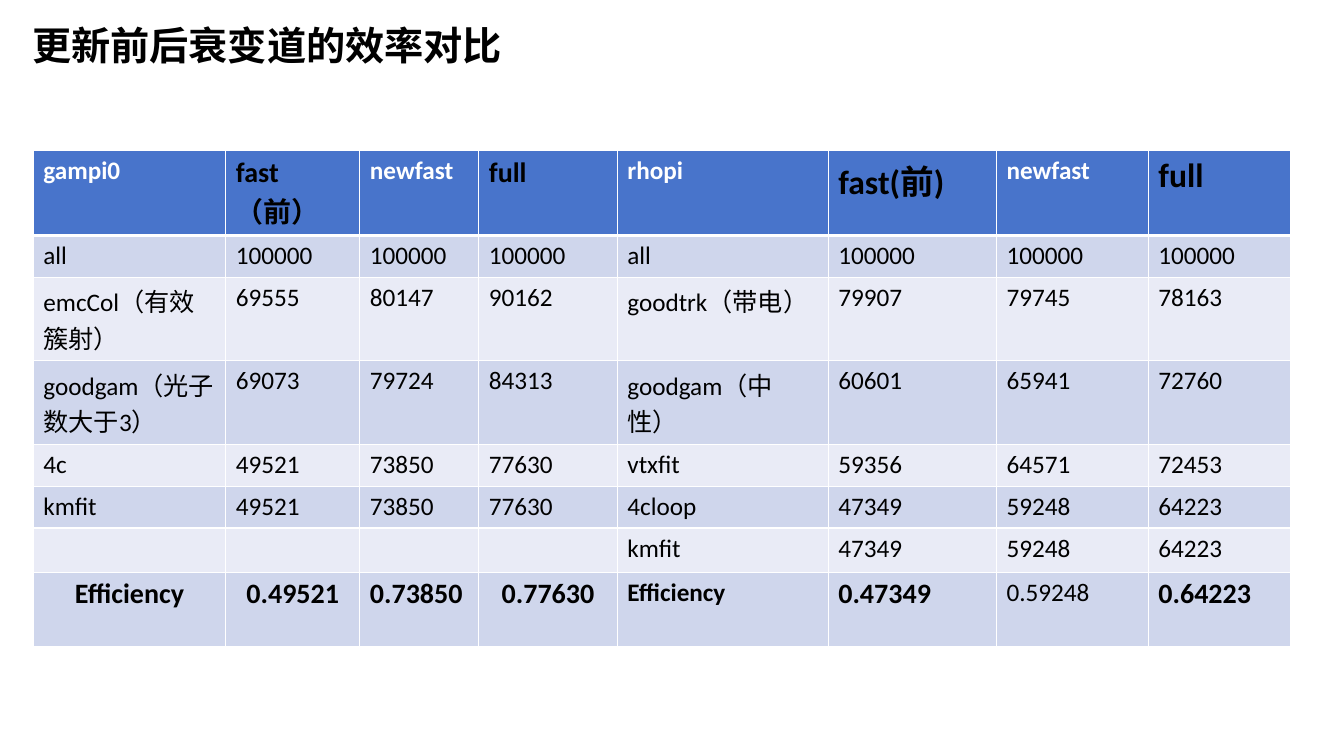
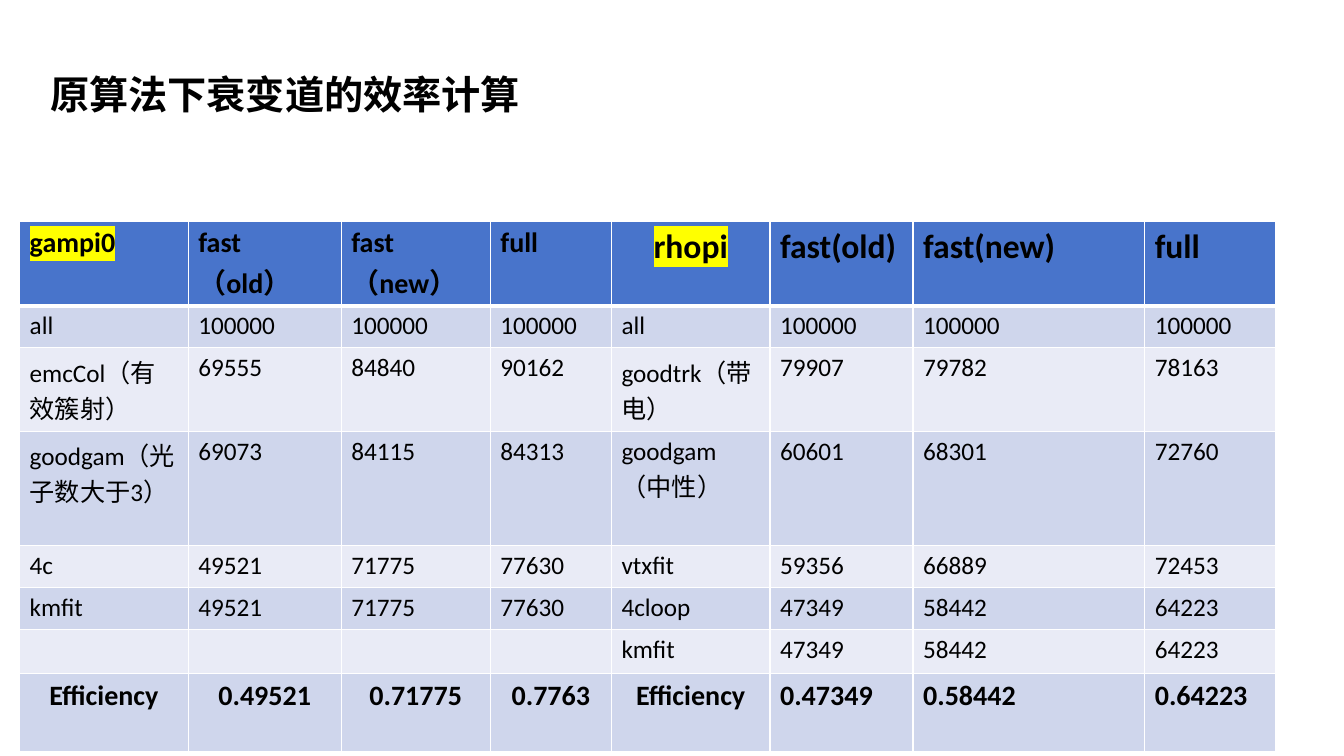
from pptx import Presentation
from pptx.dml.color import RGBColor
from pptx.enum.text import PP_ALIGN
from pptx.oxml import parse_xml
from pptx.oxml.ns import nsdecls, qn
from pptx.util import Pt

COLORS = {
    "text": "000000",
    "white": "FFFFFF",
    "header": "4874CB",
    "band_dark": "CFD6EC",
    "band_light": "E9EBF6",
    "highlight": "FFFF00",
}

GAMPI0_STEPS = ["all", "emcCol（有效簇射）", "goodgam（光子数大于3）", "4c", "kmfit"]
GAMPI0_FAST = [100000, 69555, 69073, 49521, 49521]
GAMPI0_FULL = [100000, 90162, 84313, 77630, 77630]
RHOPI_STEPS = ["all", "goodtrk（带电）", "goodgam（中性）", "vtxfit", "4cloop", "kmfit"]
RHOPI_FAST = [100000, 79907, 60601, 59356, 47349, 47349]
RHOPI_FULL = [100000, 78163, 72760, 72453, 64223, 64223]


def step_rows(gampi0_new, rhopi_new):
    gampi0 = list(zip(GAMPI0_STEPS, GAMPI0_FAST, gampi0_new, GAMPI0_FULL))
    gampi0.append(("",) * 4)
    rhopi = zip(RHOPI_STEPS, RHOPI_FAST, rhopi_new, RHOPI_FULL)
    return [[{"text": str(v)} for v in left + right] for left, right in zip(gampi0, rhopi)]


def head(text, size=18, color="white", **style):
    return dict(text=text, size=size, color=color, bold=True, **style)


def result(text, size=20, bold=True, center=False):
    return dict(text=text, size=size, bold=bold, center=center)


class Deck:
    font = "Calibri"
    title_size = 28

    def __init__(self):
        self.prs = Presentation()
        self.prs.slide_width = Pt(960)
        self.prs.slide_height = Pt(540)
        self.s = None

    def slide(self):
        self.s = self.prs.slides.add_slide(self.prs.slide_layouts[6])

    def add_text(self, tf, text, size=18, color="text", bold=False, center=False, highlight=False):
        p = tf.paragraphs[0]
        p.alignment = PP_ALIGN.CENTER if center else PP_ALIGN.LEFT
        r = p.add_run()
        r.text = text
        r.font.name = self.font
        r.font.size = Pt(size)
        r.font.bold = bold
        r.font.color.rgb = RGBColor.from_string(COLORS[color])
        if highlight:
            mark = parse_xml(
                f'<a:highlight {nsdecls("a")}>'
                f'<a:srgbClr val="{COLORS["highlight"]}"/></a:highlight>'
            )
            r.font._element.find(qn("a:solidFill")).addnext(mark)

    def title(self, left, top, text):
        tf = self.s.shapes.add_textbox(Pt(left), Pt(top), Pt(460), Pt(79)).text_frame
        tf.word_wrap = True
        self.add_text(tf, text, self.title_size, bold=True)

    def borders(self, cell, top, bottom):
        tcPr = cell._tc.get_or_add_tcPr()
        widths = {"lnL": 1, "lnR": 1, "lnT": top, "lnB": bottom}
        for i, (side, width) in enumerate(widths.items()):
            tcPr.insert(i, parse_xml(
                f'<a:{side} {nsdecls("a")} w="{int(Pt(width))}"><a:solidFill>'
                f'<a:srgbClr val="{COLORS["white"]}"/></a:solidFill></a:{side}>'
            ))

    def table(self, left, top, widths, heights, rows):
        frame = self.s.shapes.add_table(
            len(rows), len(widths), Pt(left), Pt(top), Pt(sum(widths)), Pt(sum(heights))
        )
        tbl = frame.table
        for column, width in zip(tbl.columns, widths):
            column.width = Pt(width)
        for i, (height, row) in enumerate(zip(heights, rows)):
            tbl.rows[i].height = Pt(height)
            band = "header" if i == 0 else "band_dark" if i % 2 else "band_light"
            for j, item in enumerate(row):
                cell = tbl.cell(i, j)
                cell.fill.solid()
                cell.fill.fore_color.rgb = RGBColor.from_string(COLORS[band])
                self.borders(cell, 3 if i == 1 else 1, 3 if i == 0 else 1)
                if item["text"]:
                    self.add_text(cell.text_frame, **item)


def main():
    deck = Deck()

    deck.slide()
    header = [
        head("gampi0"), head("fast（前）", 20, "text"), head("newfast"), head("full", 20, "text"),
        head("rhopi"), head("fast(前)", 24, "text"), head("newfast"), head("full", 24, "text"),
    ]
    steps = step_rows(
        [100000, 80147, 79724, 73850, 73850],
        [100000, 79745, 65941, 64571, 59248, 59248],
    )
    efficiency = [
        result("Efficiency", center=True), result("0.49521", center=True),
        result("0.73850"), result("0.77630", center=True),
        result("Efficiency", 18), result("0.47349"),
        result("0.59248", 18, False), result("0.64223"),
    ]
    deck.table(
        23.8, 107.5,
        [137.5, 95.8, 85, 98.9, 150.7, 120.2, 108.5, 101.7],
        [60.5, 30, 59.5, 59.5, 30, 30, 31.5, 53.5],
        [header, *steps, efficiency],
    )
    deck.title(16, 11.5, "更新前后衰变道的效率对比")

    deck.slide()
    header = [
        head("gampi0", 20, "text", highlight=True),
        *(head(t, 20, "text") for t in ("fast（old）", "fast（new）", "full")),
        head("rhopi", 24, "text", highlight=True, center=True),
        *(head(t, 24, "text") for t in ("fast(old)", "fast(new)", "full")),
    ]
    steps = step_rows(
        [100000, 84840, 84115, 71775, 71775],
        [100000, 79782, 68301, 66889, 58442, 58442],
    )
    values = ["Efficiency", "0.49521", "0.71775", "0.7763",
              "Efficiency", "0.47349", "0.58442", "0.64223"]
    efficiency = [result(v, center=j < 5) for j, v in enumerate(values)]
    deck.table(
        14, 158,
        [120.5, 109.3, 106.5, 86.5, 113.3, 102.2, 165.5, 93.5],
        [60.5, 30, 59.5, 81.5, 30, 30, 31.5, 56],
        [header, *steps, efficiency],
    )
    deck.title(28.8, 47, "原算法下衰变道的效率计算")

    deck.prs.save("out.pptx")


if __name__ == "__main__":
    main()
